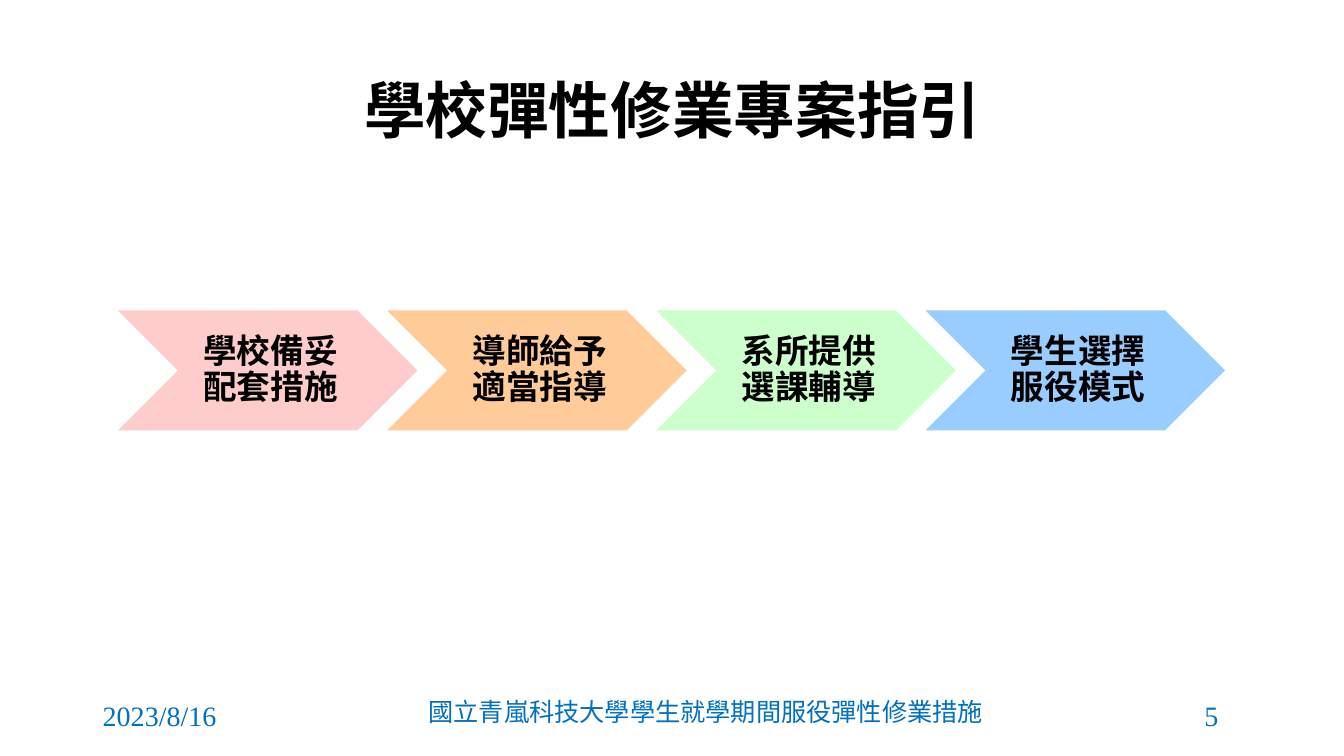
from dataclasses import dataclass

from lxml import etree
from pptx import Presentation
from pptx import util as u
from pptx.dml.color import RGBColor
from pptx.enum import shapes, text
from pptx.oxml import ns
from pptx.text.text import TextFrame

PX = 9144  # EMU per px, 100 px to the inch

BLACK = RGBColor(0x00, 0x00, 0x00)
BLUE = RGBColor(0x00, 0x70, 0xC0)
PINK = RGBColor(0xFF, 0xCC, 0xCC)
ORANGE = RGBColor(0xFF, 0xCC, 0x99)
GREEN = RGBColor(0xCC, 0xFF, 0xCC)
SKY = RGBColor(0x99, 0xCC, 0xFF)

CJK = "Noto Sans CJK SC"
SERIF = "Times New Roman"
LEFT, CENTER = text.PP_ALIGN.LEFT, text.PP_ALIGN.CENTER

STEP_LEFT, STEP_TOP = 117, 308
STEP_WIDTH, STEP_HEIGHT = 297, 119
STEP_PITCH = 267


@dataclass(frozen=True)
class Style:
    font: str
    size: int
    color: RGBColor
    bold: bool = False
    align: text.PP_ALIGN = CENTER
    spacing: float = 1.0


@dataclass(frozen=True)
class Step:
    label: str
    fill: RGBColor


@dataclass(frozen=True)
class FooterItem:
    label: str
    left: int
    top: int
    width: int
    style: Style


TITLE_STYLE = Style(CJK, 44, BLACK, bold=True, spacing=0.9)
STEP_STYLE = Style(CJK, 24, BLACK, bold=True, spacing=0.9)

STEPS = [
    Step("學校備妥配套措施", PINK),
    Step("導師給予適當指導", ORANGE),
    Step("系所提供選課輔導", GREEN),
    Step("學生選擇服役模式", SKY),
]

FOOTER_HEIGHT = 40
FOOTER = [
    FooterItem("2023/8/16", 92, 690, 139, Style(SERIF, 20, BLUE, align=LEFT)),
    FooterItem("國立青嵐科技大學學生就學期間服役彈性修業措施", 412, 686, 576,
               Style(CJK, 18, BLUE)),
    FooterItem("5", 1151, 690, 101, Style(SERIF, 20, BLUE)),
]


def px(*lengths: int) -> list[u.Emu]:
    return [u.Emu(length * PX) for length in lengths]


def write(frame: TextFrame, label: str, style: Style) -> None:
    frame.word_wrap = True
    frame.auto_size = text.MSO_AUTO_SIZE.NONE
    frame.vertical_anchor = text.MSO_ANCHOR.MIDDLE
    para = frame.paragraphs[0]
    para.alignment = style.align
    para.line_spacing = style.spacing
    span = para.add_run()
    span.text = label
    span.font.name = style.font
    span.font.size = u.Pt(style.size)
    span.font.bold = style.bold
    span.font.color.rgb = style.color
    # East Asian characters take their own typeface
    properties = span.font._element
    etree.SubElement(properties, ns.qn("a:ea"), typeface=style.font)


def add_title(page, label: str) -> None:
    title = page.shapes.title
    title.left, title.top, title.width, title.height = px(92, 40, 1150, 145)
    write(title.text_frame, label, TITLE_STYLE)


def add_step(page, index: int, step: Step) -> None:
    left = STEP_LEFT + index * STEP_PITCH
    chevron = page.shapes.add_shape(
        shapes.MSO_SHAPE.CHEVRON, *px(left, STEP_TOP, STEP_WIDTH, STEP_HEIGHT))
    chevron.shadow.inherit = False
    chevron.fill.solid()
    chevron.fill.fore_color.rgb = step.fill
    chevron.line.fill.background()
    frame = chevron.text_frame
    (frame.margin_left, frame.margin_top,
     frame.margin_right, frame.margin_bottom) = px(10, 4, 4, 4)
    write(frame, step.label, STEP_STYLE)


def add_footer_item(page, item: FooterItem) -> None:
    box = page.shapes.add_textbox(
        *px(item.left, item.top, item.width, FOOTER_HEIGHT))
    write(box.text_frame, item.label, item.style)


def main() -> None:
    deck = Presentation()
    deck.slide_width, deck.slide_height = px(1333, 750)
    page = deck.slides.add_slide(deck.slide_layouts.get_by_name("Title Only"))

    # Title
    add_title(page, "學校彈性修業專案指引")

    # Date, footer and page number
    for item in FOOTER:
        add_footer_item(page, item)

    # Chevron process
    for index, step in enumerate(STEPS):
        add_step(page, index, step)

    deck.save("out.pptx")


if __name__ == "__main__":
    main()
